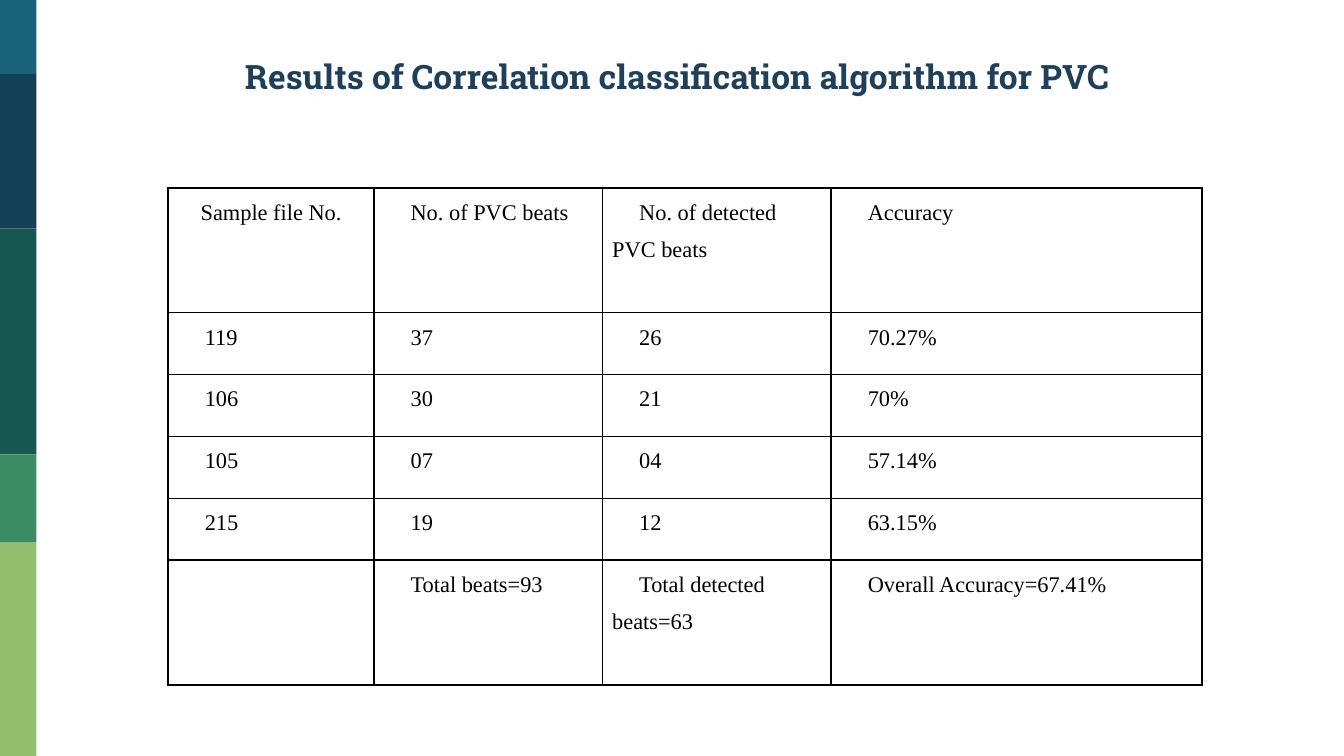
from itertools import pairwise

from pptx import Presentation
from pptx import util as u
from pptx.dml import color
from pptx.enum import shapes, text
from pptx.oxml import ns, xmlchemy

STRIPES = ["18637B", "124057", "165751", "3B8D61", "94BF6E"]
STRIPE_EDGES = [0, 1.4, 4.32, 8.59, 10.26, 14.29]
COLUMNS = [3.89, 4.32, 4.32, 7.01]
ROWS = [2.36, 1.17, 1.17, 1.17, 1.17, 2.36]
RESULTS = [
    ["Sample file No.", "No. of PVC beats", "No. of detected PVC beats", "Accuracy"],
    ["119", "37", "26", "70.27%"],
    ["106", "30", "21", "70%"],
    ["105", "07", "04", "57.14%"],
    ["215", "19", "12", "63.15%"],
    ["", "Total beats=93", "Total detected beats=63", "Overall Accuracy=67.41%"],
]
TITLE_FONT = {"name": "Roboto Slab", "size": u.Pt(18), "bold": True}
CELL_FONT = {"name": "Times New Roman", "size": u.Pt(12), "bold": False}
CELL_PARA = {"line_spacing": 1.5, "space_after": u.Pt(6)}
CELL_MARGINS = {"margin_left": u.Cm(0.18), "margin_right": u.Cm(0.18),
                "margin_top": 0, "margin_bottom": 0}


def apply(target, values):
    """Set every attribute named in a dict of format values."""
    for name, value in values.items():
        setattr(target, name, value)


def paint(colour_holder, value):
    """Give a solid fill or a font its colour from a hex string."""
    if hasattr(colour_holder, "solid"):
        colour_holder.solid()
        colour_holder.fore_color.rgb = color.RGBColor.from_string(value)
    else:
        colour_holder.color.rgb = color.RGBColor.from_string(value)


def add_stripes(page, left, width):
    """Stack the coloured stripes down one side of the page."""
    for (top, bottom), value in zip(pairwise(STRIPE_EDGES), STRIPES):
        stripe = page.shapes.add_shape(
            shapes.MSO_SHAPE.RECTANGLE, u.Cm(left), u.Cm(top), u.Cm(width), u.Cm(bottom - top))
        stripe.shadow.inherit = False
        stripe.line.fill.background()
        paint(stripe.fill, value)


def add_title(page, box, words):
    """Place and format the title placeholder in its box."""
    title = page.shapes.title
    apply(title, dict(zip(("left", "top", "width", "height"), map(u.Cm, box))))
    frame = title.text_frame
    sides = ("left", "top", "right", "bottom")
    apply(frame, {f"margin_{side}": u.Cm(0.25) for side in sides})
    apply(frame, {"text": words, "word_wrap": True, "auto_size": text.MSO_AUTO_SIZE.NONE,
                  "vertical_anchor": text.MSO_ANCHOR.MIDDLE})
    para = frame.paragraphs[0]
    para.alignment = text.PP_ALIGN.CENTER
    apply(para.font, TITLE_FONT)
    paint(para.font, "1D405D")


def add_borders(cell, value, width):
    """Draw a solid line on all four sides of a cell."""
    properties = cell._tc.get_or_add_tcPr()
    for side in ("lnL", "lnR", "lnT", "lnB"):
        line = xmlchemy.OxmlElement(f"a:{side}")
        line.set("w", str(u.Pt(width)))
        fill = xmlchemy.OxmlElement("a:solidFill")
        shade = xmlchemy.OxmlElement("a:srgbClr")
        shade.set("val", value)
        fill.append(shade)
        line.append(fill)
        properties.append(line)


def fill_cell(cell, words, centred):
    """Write and format one cell, centred or with a first-line indent."""
    apply(cell, CELL_MARGINS)
    add_borders(cell, "000000", 1)
    cell.fill.background()
    para = cell.text_frame.paragraphs[0]
    apply(para, CELL_PARA)
    apply(para.font, CELL_FONT)
    if centred:
        para.alignment = text.PP_ALIGN.CENTER
    else:
        para._p.get_or_add_pPr().set("indent", str(u.Cm(0.51)))
    if words:
        span = para.add_run()
        span.text = words
        apply(span.font, CELL_FONT)
        paint(span.font, "000000")


def add_results(page, left, top):
    """Build the table of results from its top-left corner."""
    table = page.shapes.add_table(
        len(ROWS), len(COLUMNS), u.Cm(left), u.Cm(top),
        u.Cm(sum(COLUMNS)), u.Cm(sum(ROWS))).table
    apply(table, {"first_row": False, "horz_banding": False})
    for column, width in zip(table.columns, COLUMNS):
        column.width = u.Cm(width)
    for row, height, entries in zip(table.rows, ROWS, RESULTS):
        row.height = u.Cm(height)
        for cell, words in zip(row.cells, entries):
            fill_cell(cell, words, centred=words == RESULTS[0][0])


def main():
    """Build the slide and save it."""
    deck = Presentation()
    apply(deck, {"slide_width": u.Cm(25.4), "slide_height": u.Cm(14.29)})
    page = deck.slides.add_slide(deck.slide_layouts[5])
    paint(page.background.fill, "FFFFFF")
    add_stripes(page, 0, 0.69)
    add_title(page, (2.74, 0.58, 20.12, 1.7),
              "Results of Correlation classification algorithm for PVC")
    add_results(page, 3.18, 3.55)
    deck.save("out.pptx")


if __name__ == "__main__":
    main()
